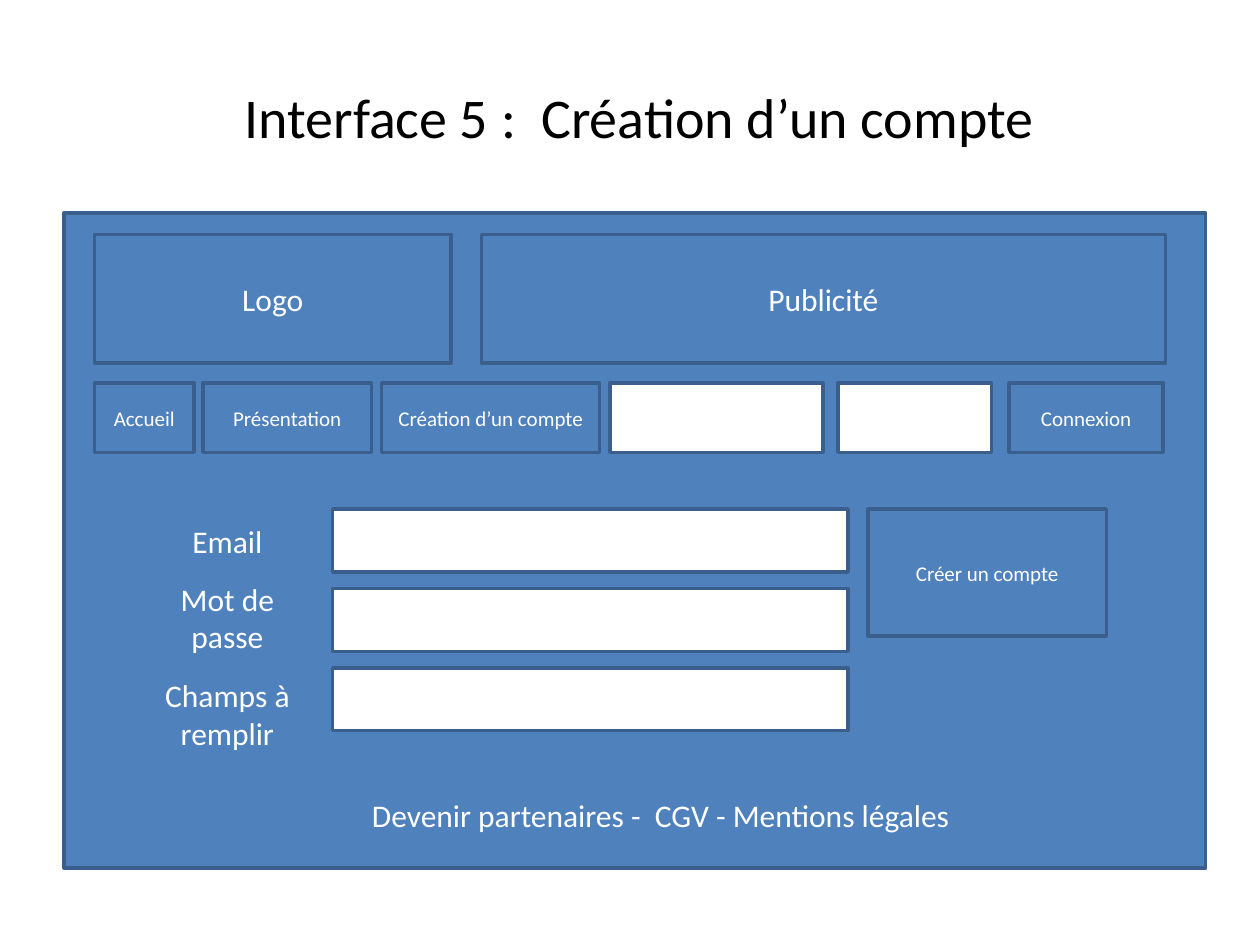
"""Build a wireframe slide of an account creation page."""
from dataclasses import dataclass

from pptx import Presentation
from pptx.dml.color import RGBColor as Color
from pptx.enum.shapes import MSO_SHAPE as Shape
from pptx.enum.text import MSO_ANCHOR as Anchor, PP_ALIGN as Align
from pptx.util import Inches, Pt


@dataclass(frozen=True)
class Theme:
    font: str = "Calibri"
    title: int = 32
    body: int = 18
    button: int = 12
    border: int = 2
    ink: Color = Color(0, 0, 0)
    white: Color = Color(255, 255, 255)
    blue: Color = Color(0x4F, 0x81, 0xBD)
    edge: Color = Color(0x3A, 0x5F, 0x8C)


THEME = Theme()
TITLE = "Interface 5\u00a0:  Création d’un compte"
FOOTER = "Devenir partenaires -  CGV - Mentions légales"
SUBMIT = "Créer un compte"
BANNERS = [("Logo", 0.75, 2.83), ("Publicité", 3.82, 5.43)]
MENU = [
    ("Accueil", 0.75, 0.79),
    ("Présentation", 1.61, 1.34),
    ("Création d’un compte", 3.03, 1.73),
    ("", 4.84, 1.69),
    ("", 6.65, 1.22),
    ("Connexion", 8.01, 1.22),
]
FIELDS = [("Email", 3.91, 0.76), ("Mot de passe", 4.4, 1), ("Champs à remplir", 5.3, 0.73)]

FRAME = (0.51, 1.69, 9.06, 5.2)
BANNER_TOP, BANNER_HEIGHT = 1.86, 1.02
MENU_TOP, MENU_HEIGHT = 3.04, 0.55
LABEL_LEFT, LABEL_WIDTH = 1.14, 1.33
INPUT_LEFT, INPUT_WIDTH, INPUT_HEIGHT = 2.64, 4.09, 0.5
FORM_TOP, FORM_STEP = 4.04, 0.63


def write(shape, text, size, color):
    frame = shape.text_frame
    frame.word_wrap = True
    frame.vertical_anchor = Anchor.MIDDLE
    para = frame.paragraphs[0]
    para.alignment = Align.CENTER
    span = para.add_run()
    span.text = text
    span.font.name = THEME.font
    span.font.size = Pt(size)
    span.font.color.rgb = color


def add_box(page, place, text="", size=THEME.body, fill=THEME.blue, bordered=True):
    box = page.shapes.add_shape(Shape.RECTANGLE, *map(Inches, place))
    box.shadow.inherit = False
    box.fill.solid()
    box.fill.fore_color.rgb = fill
    if bordered:
        box.line.color.rgb = THEME.edge
        box.line.width = Pt(THEME.border)
    else:
        box.line.fill.background()
    if text:
        write(box, text, size, THEME.white)


def add_title(page):
    title = page.shapes.title
    title.left, title.top, title.width, title.height = map(Inches, (0.5, 0.3, 9.15, 1.25))
    write(title, TITLE, THEME.title, THEME.ink)


def add_header(page):
    for text, left, width in BANNERS:
        add_box(page, (left, BANNER_TOP, width, BANNER_HEIGHT), text)
    for text, left, width in MENU:
        fill = THEME.blue if text else THEME.white
        add_box(page, (left, MENU_TOP, width, MENU_HEIGHT), text, THEME.button, fill)


def add_form(page):
    for row, (label, top, height) in enumerate(FIELDS):
        add_box(page, (LABEL_LEFT, top, LABEL_WIDTH, height), label, bordered=False)
        input_top = FORM_TOP + row * FORM_STEP
        add_box(page, (INPUT_LEFT, input_top, INPUT_WIDTH, INPUT_HEIGHT), fill=THEME.white)
    add_box(page, (6.89, FORM_TOP, 1.89, 1.01), SUBMIT, THEME.button)


def main():
    deck = Presentation()
    deck.slide_width, deck.slide_height = Inches(10), Inches(7.5)
    page = deck.slides.add_slide(deck.slide_layouts[5])
    add_title(page)
    add_box(page, FRAME)
    add_header(page)
    add_form(page)
    add_box(page, (2.48, 6.19, 5.53, 0.55), FOOTER, bordered=False)
    deck.save("out.pptx")


if __name__ == "__main__":
    main()
